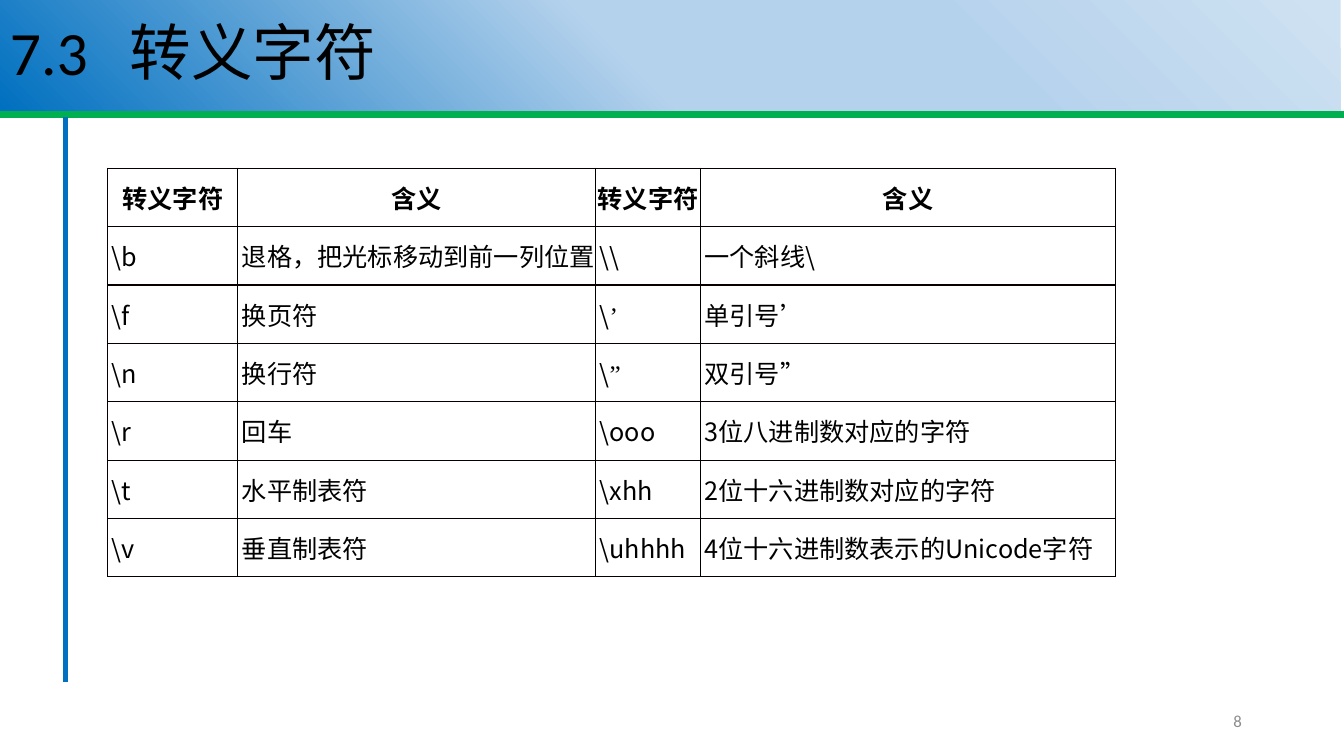
from dataclasses import dataclass

from lxml import etree
from pptx import Presentation
from pptx.dml.color import RGBColor
from pptx.enum import shapes, text
from pptx.oxml import parse_xml
from pptx.oxml.ns import nsdecls, qn
from pptx.util import Pt

SECTION, TITLE = "7.3", "转义字符"
PAGE_NUMBER = "8"
HEADER = ("转义字符", "含义", "转义字符", "含义")
ESCAPES = [
    ("\\b", "退格，把光标移动到前一列位置", "\\\\", "一个斜线\\"),
    ("\\f", "换页符", "\\’", "单引号’"),
    ("\\n", "换行符", "\\”", "双引号”"),
    ("\\r", "回车", "\\ooo", "3位八进制数对应的字符"),
    ("\\t", "水平制表符", "\\xhh", "2位十六进制数对应的字符"),
    ("\\v", "垂直制表符", "\\uhhhh", "4位十六进制数表示的Unicode字符"),
]
QUOTES = "’”"


@dataclass(frozen=True)
class Theme:
    ink: str = "000000"
    muted: str = "8C8C8C"
    green: str = "00B050"
    blue: str = "0070C0"
    rule: str = "080000"
    banner: tuple = ((1, "CEE1F2"), (29, "B5D2EC"), (53, "B5D2EC"), (100, "0070C0"))
    heading_font: str = "Calibri"
    cjk_font: str = "Noto Sans CJK SC"
    quote_font: str = "Times New Roman"
    title_size: float = 44
    cell_size: float = 18
    number_size: float = 12


THEME = Theme()
WIDTH, HEIGHT = 960, 540
BANNER_WIDTH, BANNER_HEIGHT = 957.6, 79.2
TITLE_TAB = 85.5
TABLE_LEFT, TABLE_TOP = 77, 120.2
COLUMN_WIDTHS = (92.9, 255.6, 74.9, 296.6)
ROW_HEIGHT = 41.7
CELL_INDENT, CELL_PADDING = 2.9, 7.8


def style(span, font, size, color, bold=False):
    span.font.name = font
    span.font.size = Pt(size)
    span.font.bold = bold
    span.font.color.rgb = RGBColor.from_string(color)
    east_asian = etree.SubElement(span.font._element, qn("a:ea"))
    east_asian.set("typeface", THEME.cjk_font)


def add_rule(page, start, end, color, weight):
    line = page.shapes.add_connector(
        shapes.MSO_CONNECTOR.STRAIGHT, *(Pt(value) for value in (*start, *end)))
    line.line.color.rgb = RGBColor.from_string(color)
    line.line.width = Pt(weight)
    etree.SubElement(line._element.spPr, qn("a:effectLst"))


def add_banner(page):
    banner = page.shapes.add_shape(
        shapes.MSO_SHAPE.RECTANGLE, 0, 0, Pt(BANNER_WIDTH), Pt(BANNER_HEIGHT))
    banner.shadow.inherit = False
    banner.line.fill.background()
    banner.fill.gradient()
    banner.fill.gradient_angle = 225
    stops = banner._element.spPr.find(".//" + qn("a:gsLst"))
    for stop in list(stops):
        stops.remove(stop)
    for percent, color in THEME.banner:
        stops.append(parse_xml(
            f'<a:gs {nsdecls("a")} pos="{percent * 1000}"><a:srgbClr val="{color}"/></a:gs>'))
    frame = banner.text_frame
    frame.word_wrap = True
    frame.vertical_anchor = text.MSO_ANCHOR.MIDDLE
    para = frame.paragraphs[0]
    para.text = f"{SECTION}\t{TITLE}"
    para.alignment = text.PP_ALIGN.LEFT
    para.line_spacing = 0.9
    para._p.get_or_add_pPr().append(parse_xml(
        f'<a:tabLst {nsdecls("a")}><a:tab pos="{Pt(TITLE_TAB)}" algn="l"/></a:tabLst>'))
    for span in para.runs:
        style(span, THEME.heading_font, THEME.title_size, THEME.ink)


def add_page_number(page):
    box = page.shapes.add_textbox(Pt(678.2), Pt(500.4), Pt(216), Pt(28.8))
    frame = box.text_frame
    frame.word_wrap = True
    frame.vertical_anchor = text.MSO_ANCHOR.MIDDLE
    para = frame.paragraphs[0]
    para.text = PAGE_NUMBER
    para.alignment = text.PP_ALIGN.RIGHT
    style(para.runs[0], THEME.heading_font, THEME.number_size, THEME.muted)


def set_borders(cell, column):
    inner, outer = (THEME.ink, 0.75), (THEME.rule, 1)
    edges = {"lnL": inner if column else outer, "lnR": inner, "lnT": outer, "lnB": outer}
    properties = cell._tc.get_or_add_tcPr()
    for index, (edge, (color, weight)) in enumerate(edges.items()):
        properties.insert(index, parse_xml(
            f'<a:{edge} {nsdecls("a")} w="{Pt(weight)}"><a:solidFill>'
            f'<a:srgbClr val="{color}"/></a:solidFill></a:{edge}>'))


def fill_cell(cell, words, column, is_header):
    cell.fill.background()
    set_borders(cell, column)
    cell.vertical_anchor = text.MSO_ANCHOR.MIDDLE
    cell.margin_left = 0 if is_header else Pt(CELL_INDENT)
    cell.margin_right = 0
    cell.margin_top = cell.margin_bottom = Pt(CELL_PADDING)
    para = cell.text_frame.paragraphs[0]
    para.alignment = text.PP_ALIGN.CENTER if is_header else text.PP_ALIGN.LEFT
    body = words.rstrip(QUOTES)
    for part, font in ((body, THEME.cjk_font), (words[len(body):], THEME.quote_font)):
        if part:
            span = para.add_run()
            span.text = part
            style(span, font, THEME.cell_size, THEME.ink, is_header)


def add_escape_table(page):
    rows = [HEADER, *ESCAPES]
    table = page.shapes.add_table(
        len(rows), len(HEADER), Pt(TABLE_LEFT), Pt(TABLE_TOP),
        Pt(sum(COLUMN_WIDTHS)), Pt(ROW_HEIGHT * len(rows))).table
    table.horz_banding = False
    for column, width in zip(table.columns, COLUMN_WIDTHS):
        column.width = Pt(width)
    for row, entries in enumerate(rows):
        table.rows[row].height = Pt(ROW_HEIGHT)
        for column, words in enumerate(entries):
            fill_cell(table.cell(row, column), words, column, row == 0)


def main():
    deck = Presentation()
    deck.slide_width, deck.slide_height = Pt(WIDTH), Pt(HEIGHT)
    page = deck.slides.add_slide(deck.slide_layouts[6])
    add_rule(page, (0, 82), (WIDTH, 82), THEME.green, 5.25)
    add_rule(page, (46.6, 83.5), (46.6, 487), THEME.blue, 3.75)
    add_banner(page)
    add_page_number(page)
    add_escape_table(page)
    deck.save("out.pptx")


if __name__ == "__main__":
    main()
